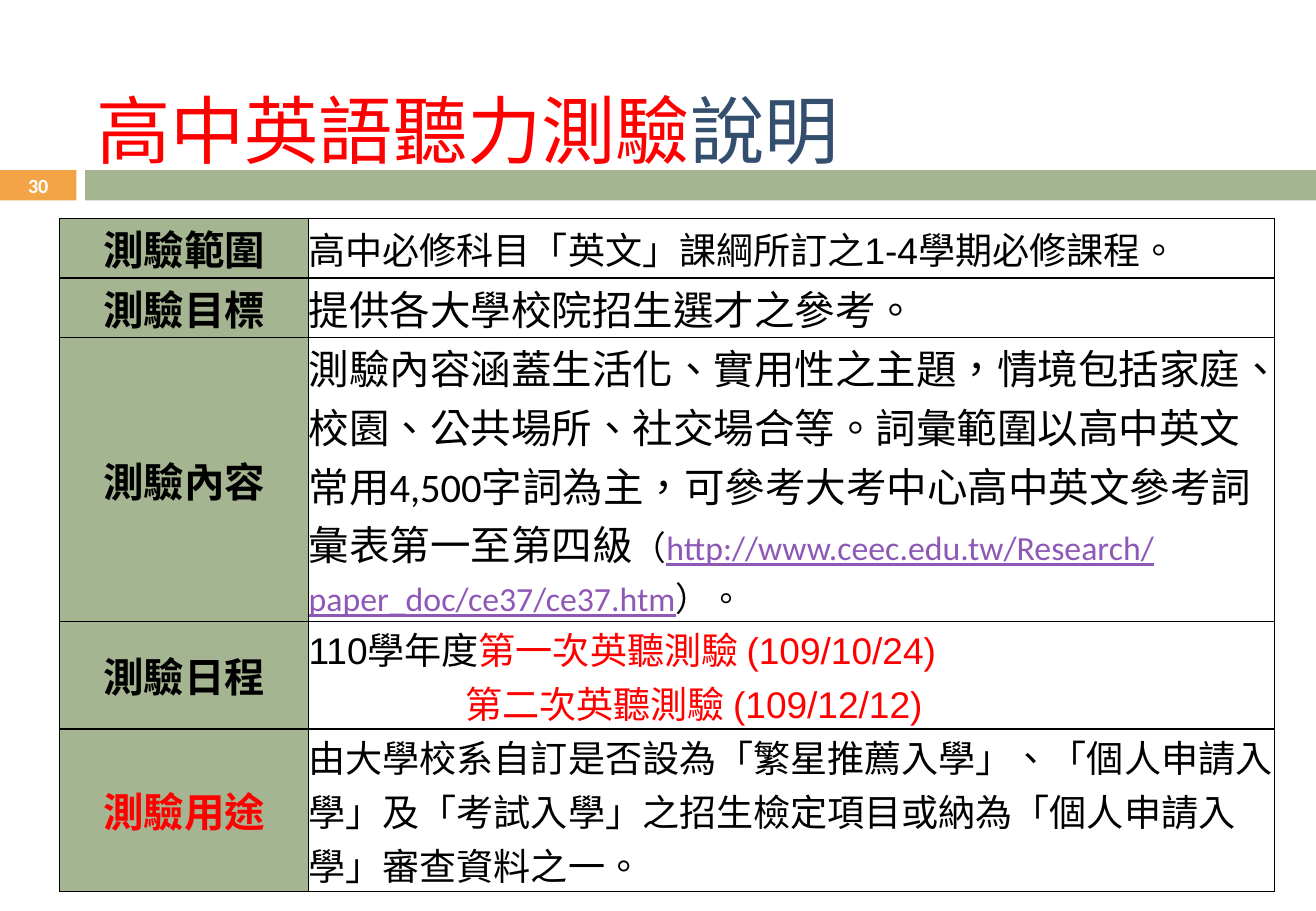
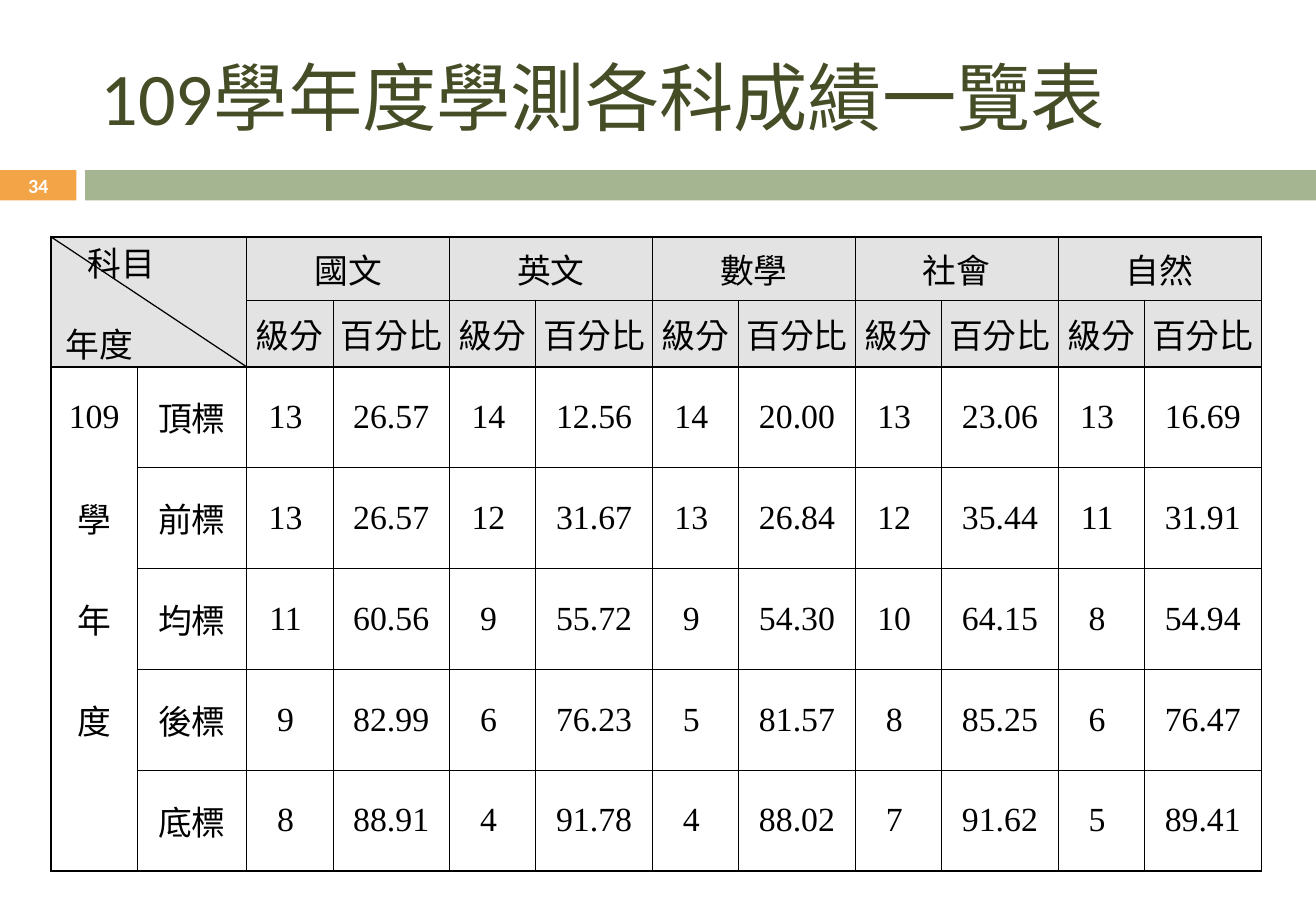
from dataclasses import dataclass

from lxml import etree
from pptx import Presentation
from pptx import util as u
from pptx.dml.color import RGBColor
from pptx.enum import lang, shapes, text
from pptx.oxml.ns import qn


@dataclass(frozen=True)
class Theme:
    black: str = "000000"
    white: str = "FFFFFF"
    red: str = "FF0000"
    navy: str = "344E6D"
    olive: str = "444D26"
    green: str = "A5B592"
    orange: str = "F3A447"
    violet: str = "8E58B6"
    grey: str = "E3E3E3"
    sans: str = "Arial"
    body: str = "Calibri"
    cjk: str = "Noto Sans CJK SC"
    serif: str = "Times New Roman"
    title: float = 44
    large: float = 24
    medium: float = 22
    small: float = 20
    page: float = 11.9


T = Theme()
WIDTH, HEIGHT = 10.83, 7.5
BAND_TOP, BAND_HEIGHT, TAB_WIDTH, BAND_LEFT = 1.4, 0.25, 0.63, 0.7
THICK, THIN = 1, 0.5
CENTER, LEFT = text.PP_ALIGN.CENTER, text.PP_ALIGN.LEFT
MIDDLE = text.MSO_ANCHOR.MIDDLE


def run(words, font=T.body, size=T.large, color=T.black, bold=False, underline=False):
    return words, font, size, color, bold, underline


# Listening test: label, label colour, paragraphs of (indent, runs)
LISTENING_TITLE = [run("高中英語聽力測驗", size=T.title, color=T.red),
                   run("說明", T.sans, T.title, T.navy)]
LISTENING_AT = (0.49, 1.8)
LISTENING_COLS = [2.05, 7.95]
LISTENING_ROWS = [0.49, 0.49, 2.06, 0.88, 1.34]
LISTENING = [
    ("測驗範圍", T.black,
     [(0, [run("高中必修科目「英文」課綱所訂之1-4學期必修課程。", T.sans, T.medium)])]),
    ("測驗目標", T.black,
     [(0, [run("提供各大學校院招生選才之參考。", T.sans)])]),
    ("測驗內容", T.black,
     [(0, [run("測驗內容涵蓋生活化、實用性之主題，情境包括家庭、校園、公共場所、"
               "社交場合等。詞彙範圍以高中英文常用4,500字詞為主，"
               "可參考大考中心高中英文參考詞彙表第一至第四級"),
           run("（", size=T.small),
           run("http://www.ceec.edu.tw/Research/paper_doc/ce37/ce37.htm",
               size=T.small, color=T.violet, underline=True),
           run("）。", size=T.small)])]),
    ("測驗日程", T.black,
     [(0, [run("110學年度", T.sans, T.medium),
           run("第一次英聽測驗 (109/10/24)", T.sans, T.medium, T.red)]),
      (1.29, [run("第二次英聽測驗 (109/12/12)", T.sans, T.medium, T.red)])]),
    ("測驗用途", T.red,
     [(0, [run("由大學校系自訂是否設為「繁星推薦入學」、「個人申請入學」及"
               "「考試入學」之招生檢定項目或納為「個人申請入學」審查資料之一。",
               T.sans, T.medium)])]),
]

# Score table: one (level, percentage) pair per subject in each row
SCORES_TITLE = [run("109學年度學測各科成績一覽表", size=T.title, color=T.olive)]
SCORES_AT = (0.42, 1.95)
SUBJECTS = ["國文", "英文", "數學", "社會", "自然"]
MEASURES = ["級分", "百分比"]
SCORES_COLS = [0.71, 0.9] + [0.71, 0.96] * len(SUBJECTS)
SCORES_ROWS = [0.52, 0.55] + [0.83] * 5
YEAR = ["109", "學", "年", "度", ""]
SCORES = [
    ("頂標", "13 26.57 14 12.56 14 20.00 13 23.06 13 16.69"),
    ("前標", "13 26.57 12 31.67 13 26.84 12 35.44 11 31.91"),
    ("均標", "11 60.56 9 55.72 9 54.30 10 64.15 8 54.94"),
    ("後標", "9 82.99 6 76.23 5 81.57 8 85.25 6 76.47"),
    ("底標", "8 88.91 4 91.78 4 88.02 7 91.62 5 89.41"),
]
LEVEL_INSET = 0.07


def rgb(color):
    return RGBColor.from_string(color)


def write(tf, paragraphs, align=LEFT):
    """Fill a text frame with (indent, runs) paragraphs."""
    for i, (indent, runs) in enumerate(paragraphs):
        p = tf.paragraphs[0] if i == 0 else tf.add_paragraph()
        p.alignment = align
        if indent:
            p._p.get_or_add_pPr().set("marL", str(u.Inches(indent)))
        for words, font, size, color, bold, underline in runs:
            r = p.add_run()
            r.text = words
            f = r.font
            f.name, f.size, f.bold, f.underline = font, u.Pt(size), bold, underline
            f.color.rgb = rgb(color)
            f.language_id = lang.MSO_LANGUAGE_ID.TRADITIONAL_CHINESE


def add_band(slide, left, width, color):
    sp = slide.shapes.add_shape(
        shapes.MSO_SHAPE.RECTANGLE, u.Inches(left), u.Inches(BAND_TOP),
        u.Inches(width), u.Inches(BAND_HEIGHT))
    sp.shadow.inherit = False
    sp.fill.solid()
    sp.fill.fore_color.rgb = rgb(color)
    sp.line.fill.background()
    return sp


def add_slide(prs, title_runs, title_at, page):
    """Add a slide with the title, the colour bands and the page number."""
    slide = prs.slides.add_slide(prs.slide_layouts[5])
    title = slide.shapes.title
    title.left, title.top, title.width, title.height = map(u.Inches, title_at)
    tf = title.text_frame
    tf.auto_size, tf.vertical_anchor = text.MSO_AUTO_SIZE.NONE, MIDDLE
    write(tf, [(0, title_runs)])

    tab = add_band(slide, 0, TAB_WIDTH, T.orange)
    add_band(slide, BAND_LEFT, WIDTH - BAND_LEFT, T.green)
    tf = tab.text_frame
    tf.margin_top = tf.margin_bottom = 0
    tf.vertical_anchor = MIDDLE
    write(tf, [(0, [run(page, size=T.page, color=T.white, bold=True)])], CENTER)
    return slide


def add_grid(slide, at, cols, rows):
    frame = slide.shapes.add_table(
        len(rows), len(cols), *map(u.Inches, (*at, sum(cols), sum(rows))))
    table = frame.table
    table.first_row = table.horz_banding = False
    for col, width in zip(table.columns, cols):
        col.width = u.Inches(width)
    for row, height in zip(table.rows, rows):
        row.height = u.Inches(height)
    return table


def style_cell(cell, fill, borders):
    """Set fill, zero margins and left, right, top, bottom border widths (0 for none)."""
    tc_pr = cell._tc.get_or_add_tcPr()
    for side, width in zip("LRTB", borders):
        ln = etree.SubElement(tc_pr, qn(f"a:ln{side}"), w=str(u.Pt(width)))
        if width:
            solid = etree.SubElement(ln, qn("a:solidFill"))
            etree.SubElement(solid, qn("a:srgbClr"), val=T.black)
        else:
            etree.SubElement(ln, qn("a:noFill"))
    cell.fill.solid()
    cell.fill.fore_color.rgb = rgb(fill)
    cell.margin_left = cell.margin_right = cell.margin_top = cell.margin_bottom = 0
    cell.vertical_anchor = MIDDLE


def build_listening(prs):
    slide = add_slide(prs, LISTENING_TITLE, (0.69, 0.52, 7.8, 1.08), "30")
    table = add_grid(slide, LISTENING_AT, LISTENING_COLS, LISTENING_ROWS)
    for r, (label, color, paragraphs) in enumerate(LISTENING):
        head, detail = table.cell(r, 0), table.cell(r, 1)
        style_cell(head, T.green, [THICK] * 4)
        style_cell(detail, T.white, [THICK] * 4)
        write(head.text_frame, [(0, [run(label, color=color, bold=True)])], CENTER)
        write(detail.text_frame, paragraphs)


def row_edge(edge, col):
    """Width of the horizontal rule above row number edge."""
    if edge in (0, 2, len(SCORES_ROWS)):
        return THICK
    if col == 0 or (col == 1 and edge == 1):
        return 0
    return THIN


def build_scores(prs):
    slide = add_slide(prs, SCORES_TITLE, (0.73, 0.25, 9.66, 1.08), "34")
    table = add_grid(slide, SCORES_AT, SCORES_COLS, SCORES_ROWS)
    for r in range(len(SCORES_ROWS)):
        for c in range(len(SCORES_COLS)):
            style_cell(table.cell(r, c), T.grey if r < 2 else T.white,
                       (THIN if c else THICK, THIN, row_edge(r, c), row_edge(r + 1, c)))

    def put(r, c, words, font=T.cjk, align=CENTER, indent=0):
        write(table.cell(r, c).text_frame,
              [(indent, [run(words, font, T.small)])], align)

    corners = [("科目", 0.3, text.MSO_ANCHOR.TOP), ("年度", 0.12, text.MSO_ANCHOR.BOTTOM)]
    for r, (words, indent, anchor) in enumerate(corners):
        table.cell(r, 0).merge(table.cell(r, 1))
        table.cell(r, 0).vertical_anchor = anchor
        put(r, 0, words, align=LEFT, indent=indent)
    for i, subject in enumerate(SUBJECTS):
        c = 2 + 2 * i
        table.cell(0, c).merge(table.cell(0, c + 1))
        put(0, c, subject)
        for j, measure in enumerate(MEASURES):
            put(1, c + j, measure)
    for r, (year, (grade, values)) in enumerate(zip(YEAR, SCORES), start=2):
        if year:
            put(r, 0, year, T.serif if year.isdigit() else T.cjk)
        put(r, 1, grade)
        for c, value in enumerate(values.split(), start=2):
            put(r, c, value, T.serif)
            if c % 2 == 0:
                table.cell(r, c).margin_right = u.Inches(LEVEL_INSET)

    left, top = SCORES_AT
    diagonal = slide.shapes.add_connector(
        shapes.MSO_CONNECTOR.STRAIGHT, u.Inches(left), u.Inches(top),
        u.Inches(left + sum(SCORES_COLS[:2])), u.Inches(top + sum(SCORES_ROWS[:2])))
    diagonal.line.color.rgb = rgb(T.black)
    diagonal.line.width = u.Pt(0.75)
    etree.SubElement(diagonal._element.spPr, qn("a:effectLst"))


def main():
    prs = Presentation()
    prs.slide_width, prs.slide_height = u.Inches(WIDTH), u.Inches(HEIGHT)
    build_listening(prs)
    build_scores(prs)
    prs.save("out.pptx")


if __name__ == "__main__":
    main()
